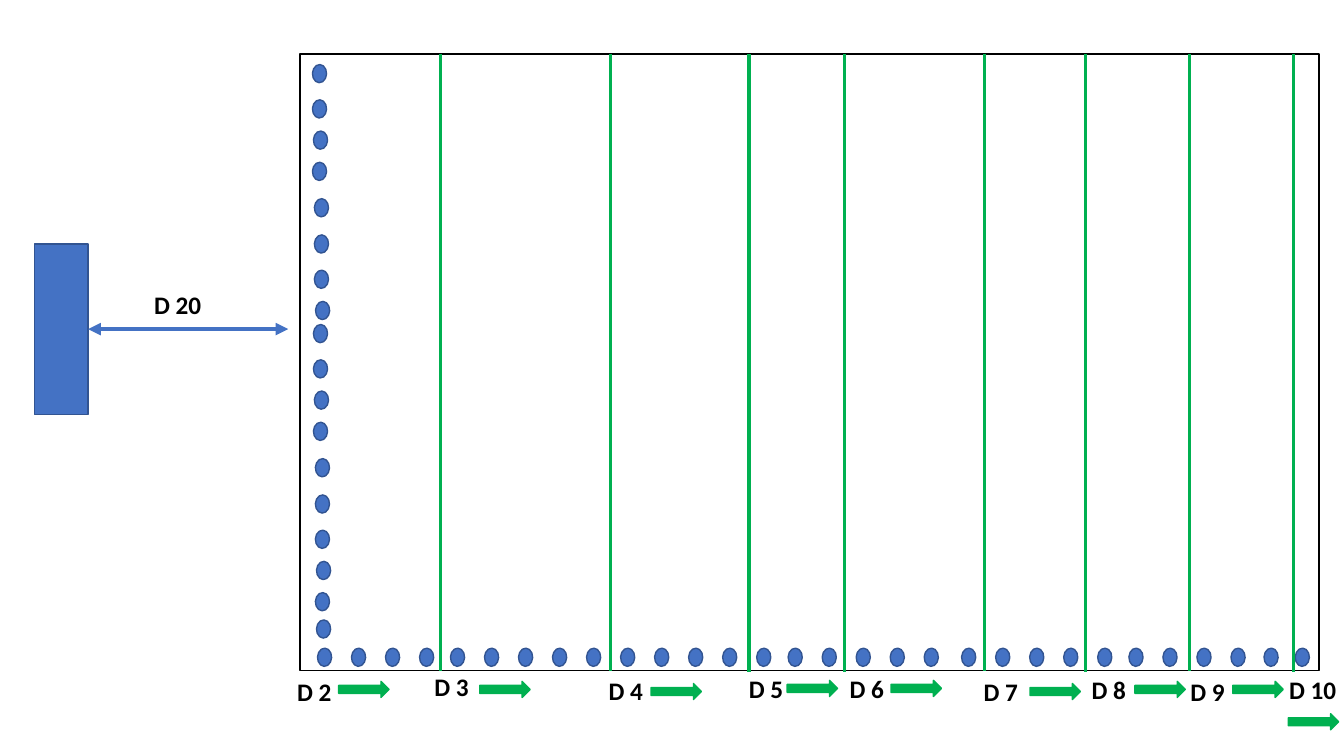
import lxml.etree
import pptx
import pptx.dml.color
import pptx.enum.shapes
import pptx.enum.text
import pptx.oxml.ns
import pptx.util

Pt = pptx.util.Pt
SHAPE = pptx.enum.shapes.MSO_SHAPE
COLORS = {
    "white": "FFFFFF",
    "black": "000000",
    "blue": "4472C4",
    "navy": "325491",
    "green": "00B050",
}


def add_figure(kind, left, top, width, height, fill, outline):
    figure = page.shapes.add_shape(kind, Pt(left), Pt(top), Pt(width), Pt(height))
    figure.shadow.inherit = False
    figure.fill.solid()
    figure.fill.fore_color.rgb = pptx.dml.color.RGBColor.from_string(COLORS[fill])
    figure.line.color.rgb = pptx.dml.color.RGBColor.from_string(COLORS[outline])
    figure.line.width = Pt(1)
    return figure


def add_line(start_x, start_y, end_x, end_y, color, width):
    line = page.shapes.add_connector(
        pptx.enum.shapes.MSO_CONNECTOR.STRAIGHT,
        Pt(start_x), Pt(start_y), Pt(end_x), Pt(end_y))
    line.line.color.rgb = pptx.dml.color.RGBColor.from_string(COLORS[color])
    line.line.width = Pt(width)
    lxml.etree.SubElement(line._element.spPr, pptx.oxml.ns.qn("a:effectLst"))
    return line


deck = pptx.Presentation()
deck.slide_width, deck.slide_height = Pt(960), Pt(540)
page = deck.slides.add_slide(deck.slide_layouts[6])

# Field and its dots
add_figure(SHAPE.RECTANGLE, 214.2, 38.5, 727.9, 440.6, "white", "black")

dot_step = 24.3
row_groups = [(226.8, 4), (321.8, 10), (563, 5), (686.9, 5), (806.4, 4),
              (902.9, 1), (925.2, 1)]
dots = [(start + i * dot_step, 463) for start, count in row_groups for i in range(count)]

column_pattern = [(0, 0), (0, 25.2), (0.7, 47.5), (0, 69.8), (1.4, 95.8),
                  (1.4, 121.7), (1.4, 146.9), (2.2, 169.2), (1.4, 191.5), (2.2, 211)]
for left, top, count in [(223.2, 46.1, 8), (223.9, 231.8, 10)]:
    dots += [(left + dx, top + dy) for dx, dy in column_pattern[:count]]

for left, top in dots:
    dot = add_figure(SHAPE.OVAL, left, top, 10.1, 13, "blue", "navy")
    dot.rotation = 2.7

# Block and its distance to the field
block = add_figure(SHAPE.RECTANGLE, 24.5, 174.2, 38.5, 121.8, "blue", "navy")
distance = add_line(63, 235.1, 205.9, 235.1, "blue", 3)
distance.begin_connect(block, 3)
for end in ("a:headEnd", "a:tailEnd"):
    lxml.etree.SubElement(
        distance.line._get_or_add_ln(), pptx.oxml.ns.qn(end), type="triangle")

# Section dividers
for x, top in [(314.6, 38.3), (436.3, 38.3), (535, 38.9), (603.4, 38.9),
               (703.4, 38.3), (775.4, 38.9), (849.6, 38.3), (923.8, 38.9)]:
    add_line(x, top, x, top + 441.3, "green", 2.25)

# Labels
labels = [
    ("D 2", 205.2, 479.5), ("D 3", 303.1, 475.9), ("D 4", 427.7, 478.8),
    ("D 5", 527.8, 477.4), ("D 6", 599.8, 477.4), ("D 7", 695.5, 479.5),
    ("D 8", 772.6, 478.1), ("D 9", 843.1, 479.5), ("D 10", 913.7, 478.1),
    ("D 20", 103, 203),
]
label_format = {"name": "Calibri", "size": Pt(18), "bold": True}
for text, left, top in labels:
    width = 39.6 if len(text) == 3 else 49
    box = page.shapes.add_textbox(Pt(left), Pt(top), Pt(width), Pt(29.1))
    box.text_frame.word_wrap = False
    box.text_frame.auto_size = pptx.enum.text.MSO_AUTO_SIZE.SHAPE_TO_FIT_TEXT
    span = box.text_frame.paragraphs[0].add_run()
    span.text = text
    for name, value in label_format.items():
        setattr(span.font, name, value)
    span.font.color.rgb = pptx.dml.color.RGBColor.from_string(COLORS["black"])

# Direction arrows
for left, top in [(241.9, 486.7), (342.7, 486.7), (465.1, 488.2), (562.3, 486),
                  (636.5, 486), (735.8, 488.2), (810.7, 486.7), (880.6, 486.7),
                  (920.2, 509.8)]:
    add_figure(SHAPE.RIGHT_ARROW, left, top, 36, 11.5, "green", "green")

deck.save("out.pptx")
